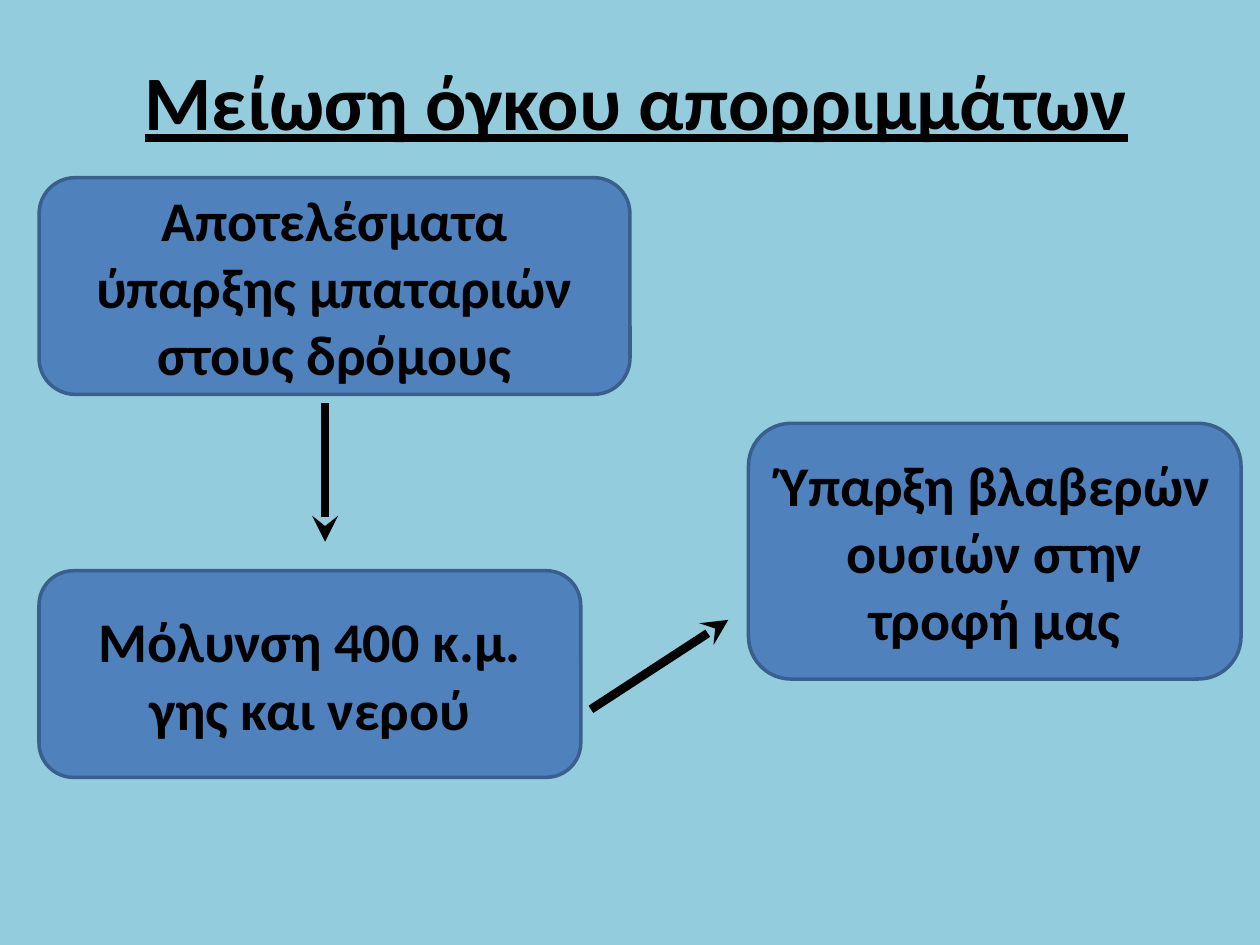
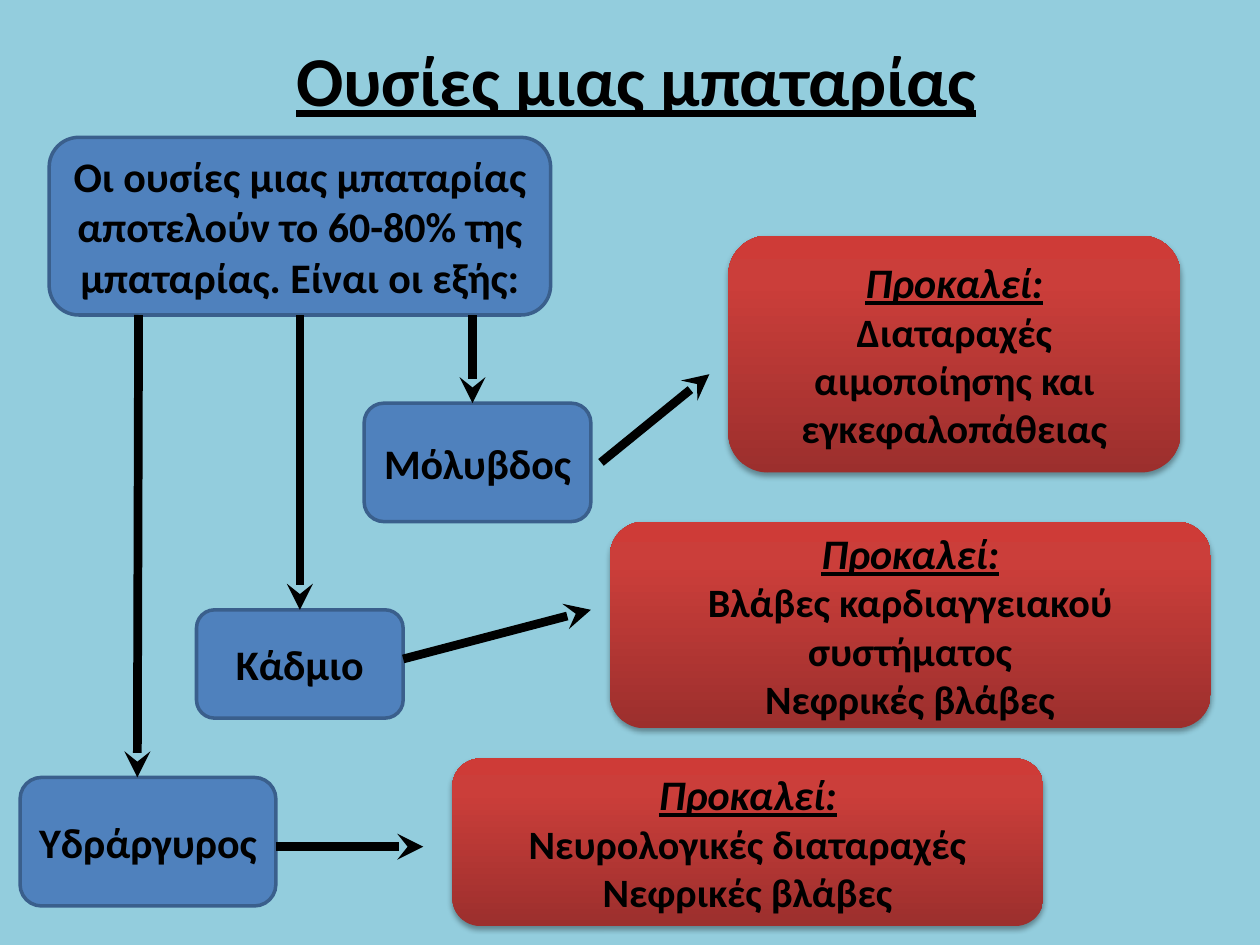
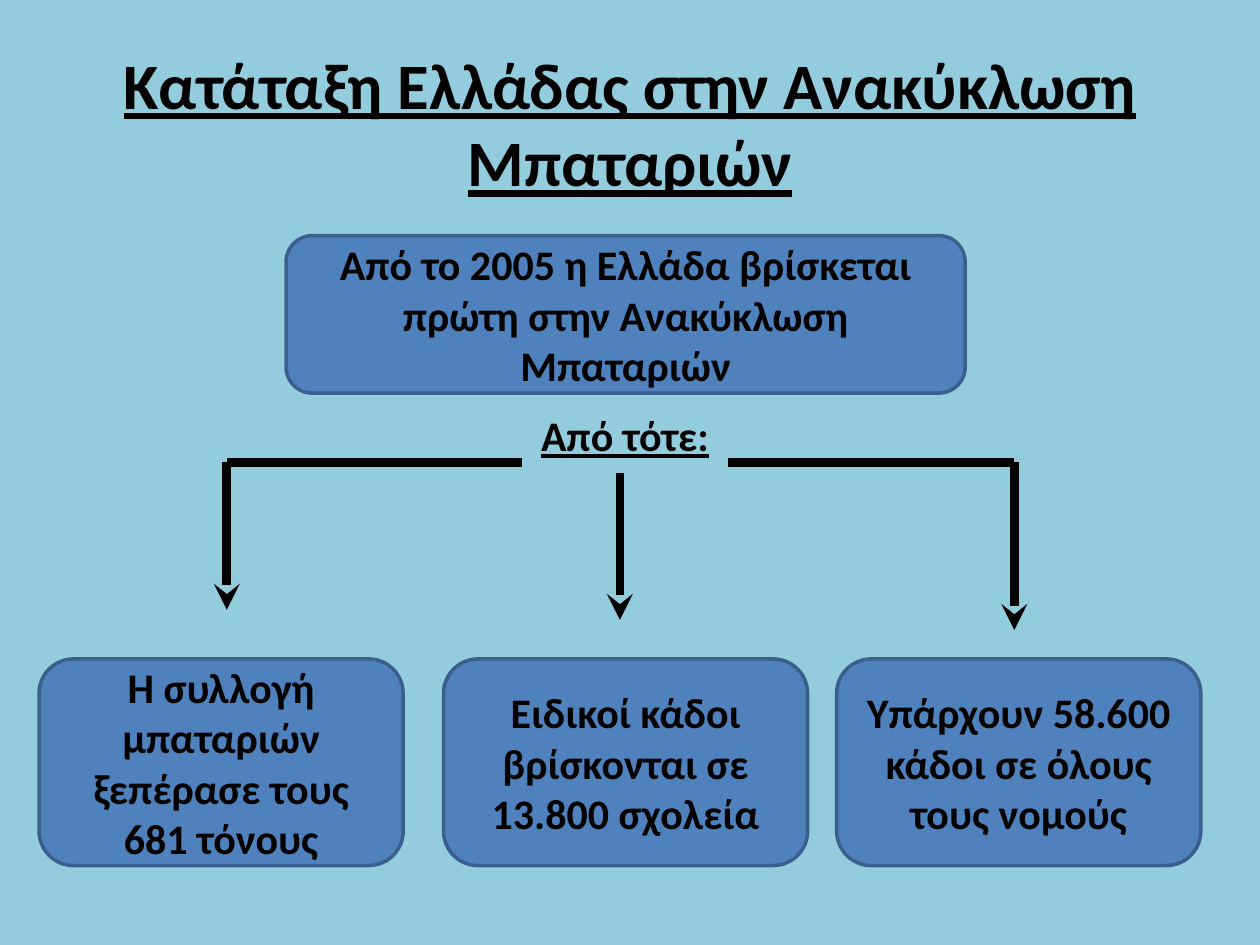
from copy import deepcopy
from dataclasses import dataclass

from lxml.etree import SubElement
from pptx import Presentation
from pptx.dml.color import RGBColor
from pptx.enum.shapes import MSO_CONNECTOR, MSO_SHAPE
from pptx.enum.text import MSO_ANCHOR, PP_ALIGN
from pptx.oxml.ns import qn
from pptx.util import Inches, Pt

ROUND = MSO_SHAPE.ROUNDED_RECTANGLE
STRAIGHT = MSO_CONNECTOR.STRAIGHT
CENTER = PP_ALIGN.CENTER
TOP, MIDDLE = MSO_ANCHOR.TOP, MSO_ANCHOR.MIDDLE


@dataclass(frozen=True)
class Theme:
    font: str = "Calibri"
    back: str = "93CDDD"
    ink: str = "000000"
    blue: str = "4F81BD"
    edge: str = "3A5F8C"
    reds: tuple = ((0, "9C2F2D"), (0.8, "CB3E3A"), (1, "CE3B37"))
    large: int = 32
    body: int = 24
    small: int = 23
    rim: int = 2
    stroke: int = 5


def color(code):
    return RGBColor.from_string(code)


def inches(values):
    return [Inches(value) for value in values]


class Deck:
    def __init__(self, theme):
        self.theme = theme
        self.show = Presentation()
        self.show.slide_width = Inches(10)
        self.show.slide_height = Inches(7.5)
        self.slide = None

    def page(self):
        self.slide = self.show.slides.add_slide(self.show.slide_layouts[6])
        fill = self.slide.background.fill
        fill.solid()
        fill.fore_color.rgb = color(self.theme.back)

    def letter(self, shape, lines, sizes, under=False, anchor=MIDDLE):
        frame = shape.text_frame
        frame.word_wrap = True
        frame.vertical_anchor = anchor
        frame.text = "\n".join(lines)
        for part, size in zip(frame.paragraphs, sizes):
            part.alignment = CENTER
            font = part.font
            font.name = self.theme.font
            font.size = Pt(size)
            font.bold = True
            font.underline = under
            font.color.rgb = color(self.theme.ink)

    def label(self, at, text, size, anchor=MIDDLE):
        shape = self.slide.shapes.add_textbox(*inches(at))
        self.letter(shape, [text], [size], True, anchor)

    def panel(self, at):
        shape = self.slide.shapes.add_shape(ROUND, *inches(at))
        shape.shadow.inherit = False
        return shape

    def box(self, at, text, size):
        shape = self.panel(at)
        shape.fill.solid()
        shape.fill.fore_color.rgb = color(self.theme.blue)
        shape.line.color.rgb = color(self.theme.edge)
        shape.line.width = Pt(self.theme.rim)
        self.letter(shape, [text], [size])
        return shape

    def effect(self, at, *harms):
        shape = self.panel(at)
        shape.line.fill.background()
        fill = shape.fill
        fill.gradient()
        fill.gradient_angle = 90
        props = shape._element.spPr
        stops = props.find(".//" + qn("a:gsLst"))
        stops.append(deepcopy(stops[-1]))
        for stop, (place, code) in zip(fill.gradient_stops, self.theme.reds):
            stop.position = place
            stop.color.rgb = color(code)
        shade = SubElement(props.find(qn("a:effectLst")), qn("a:outerShdw"),
                           blurRad=str(Pt(3.1)), dist=str(Pt(1.8)),
                           dir="5400000", rotWithShape="0")
        tint = SubElement(shade, qn("a:srgbClr"), val=self.theme.ink)
        SubElement(tint, qn("a:alpha"), val="35000")
        sizes = [self.theme.body] + [self.theme.small] * len(harms)
        self.letter(shape, ["Προκαλεί:", *harms], sizes)
        head = shape.text_frame.paragraphs[0].font
        head.italic = head.underline = True

    def line(self, start, end, arrow=True):
        link = self.slide.shapes.add_connector(STRAIGHT, *inches(start + end))
        link.line.color.rgb = color(self.theme.ink)
        link.line.width = Pt(self.theme.stroke)
        props = link._element.spPr
        if arrow:
            SubElement(props.find(qn("a:ln")), qn("a:tailEnd"), type="stealth")
        SubElement(props, qn("a:effectLst"))
        return link


def volume(deck):
    size = deck.theme.large
    deck.page()
    deck.label((0.55, 0.25, 9, 1.08), "Μείωση όγκου απορριμμάτων", 44)
    deck.box((0.31, 1.41, 4.69, 1.72),
             "Αποτελέσματα ύπαρξης μπαταριών στους δρόμους", size)
    deck.box((0.31, 4.53, 4.3, 1.64), "Μόλυνση 400 κ.μ. γης και νερού", size)
    deck.box((5.94, 3.36, 3.91, 2.03),
             "Ύπαρξη βλαβερών ουσιών στην τροφή μας", size)
    deck.line((2.58, 3.2), (2.58, 4.3))
    deck.line((4.69, 5.63), (5.78, 4.92))


def metals(deck):
    size = deck.theme.body
    deck.page()
    deck.label((0.55, 0, 9, 1.25), "Ουσίες μιας μπαταρίας", 40)
    intro = deck.box(
        (0.39, 1.09, 3.98, 1.41),
        "Οι ουσίες μιας μπαταρίας αποτελούν το 60-80% της μπαταρίας. "
        "Είναι οι εξής:", size)
    deck.box((2.89, 3.2, 1.8, 0.94), "Μόλυβδος", size)
    cadmium = deck.box((1.56, 4.84, 1.64, 0.86), "Κάδμιο", size)
    deck.box((0.16, 6.17, 2.03, 1.02), "Υδράργυρος", size)

    deck.effect((5.78, 1.87, 3.59, 1.88),
                "Διαταραχές αιμοποίησης και εγκεφαλοπάθειας")
    deck.effect((4.84, 4.14, 4.77, 1.64),
                "Βλάβες καρδιαγγειακού συστήματος", "Νεφρικές βλάβες")
    deck.effect((3.59, 6.02, 4.69, 1.33),
                "Νευρολογικές διαταραχές Νεφρικές βλάβες")

    deck.line((1.1, 2.5), (1.09, 6.17))
    deck.line((3.75, 2.5), (3.75, 3.2))
    drop = deck.line((2.38, 2.5), (2.38, 4.84))
    drop.begin_connect(intro, 2)
    drop.end_connect(cadmium, 0)
    deck.line((4.77, 3.67), (5.63, 2.97))
    deck.line((3.2, 5.23), (4.69, 4.84))
    deck.line((2.19, 6.72), (3.36, 6.72))


def ranking(deck):
    size = deck.theme.body
    deck.page()
    deck.label((0, 0.23, 10, 1.48),
               "Κατάταξη Ελλάδας στην Ανακύκλωση Μπαταριών", 37)
    deck.box((2.27, 1.87, 5.39, 1.25),
             "Από το 2005 η Ελλάδα βρίσκεται πρώτη στην Ανακύκλωση Μπαταριών",
             size)
    deck.label((3.75, 3.2, 2.42, 0.5), "Από τότε:", size, TOP)
    facts = (
        (0.31, "Η συλλογή μπαταριών ξεπέρασε τους 681 τόνους"),
        (3.52, "Ειδικοί κάδοι βρίσκονται σε 13.800 σχολεία"),
        (6.64, "Υπάρχουν 58.600 κάδοι σε όλους τους νομούς"),
    )
    for left, text in facts:
        deck.box((left, 5.23, 2.89, 1.64), text, size)
    for near, far, foot in ((4.14, 1.8, 4.84), (5.78, 8.05, 5)):
        deck.line((near, 3.67), (far, 3.67), False)
        deck.line((far, 3.67), (far, foot))
    deck.line((4.92, 3.75), (4.92, 4.92))


def main():
    deck = Deck(Theme())
    volume(deck)
    metals(deck)
    ranking(deck)
    deck.show.save("out.pptx")


if __name__ == "__main__":
    main()
